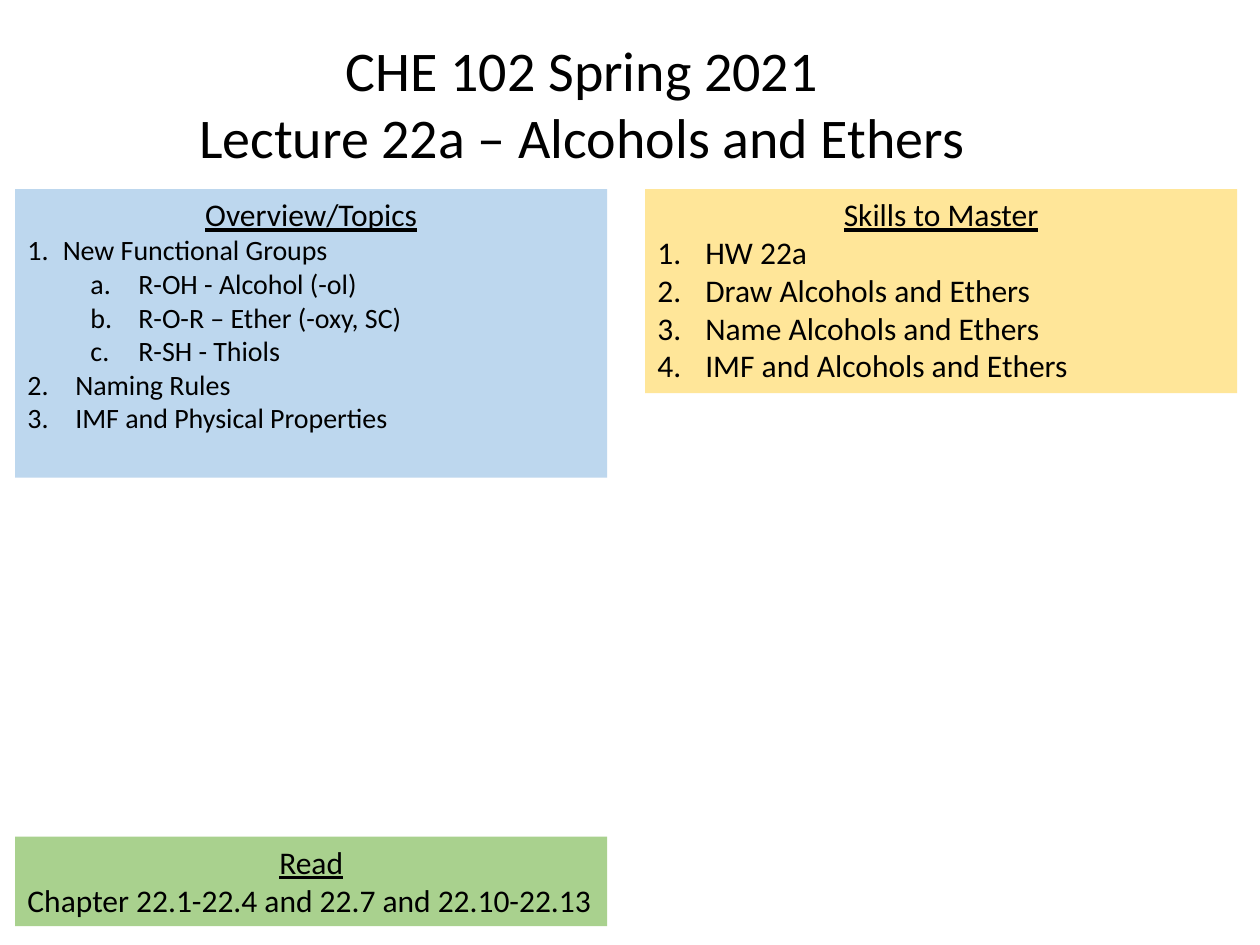
from lxml.etree import SubElement
from pptx import Presentation
from pptx.dml.color import RGBColor
from pptx.enum.shapes import MSO_SHAPE as Shape
from pptx.enum.text import MSO_ANCHOR as Anchor, MSO_AUTO_SIZE as Fit, PP_ALIGN as Align
from pptx.oxml.ns import qn
from pptx.util import Inches, Pt


def color(part, code):
    part.rgb = RGBColor.from_string(code)


def setup(frame, wrap):
    frame.word_wrap = wrap
    frame.auto_size = Fit.NONE
    frame.vertical_anchor = Anchor.TOP
    frame.margin_left = frame.margin_right = Inches(0.1)
    frame.margin_top = frame.margin_bottom = Inches(0.05)


def write(para, text, size, align=Align.LEFT, under=False):
    para.alignment = align
    run = para.add_run()
    run.text = text
    font = run.font
    font.name, font.size, font.underline = "Calibri", Pt(size), under
    color(font.color, "000000")


def number(para, style, left, hang):
    props = para._p.get_or_add_pPr()
    props.set("marL", str(Inches(left)))
    props.set("indent", str(-Inches(hang)))
    SubElement(props, qn("a:buFont"), typeface="+mj-lt")
    SubElement(props, qn("a:buAutoNum"), type=style)


def heading(slide, box, lines):
    title = slide.shapes.title
    title.left, title.top, title.width, title.height = map(Inches, box)
    frame = title.text_frame
    setup(frame, False)
    for i, line in enumerate(lines):
        para = frame.add_paragraph() if i else frame.paragraphs[0]
        write(para, line, 32, Align.CENTER)


def panel(slide, box, fill, head, items, size=18):
    shape = slide.shapes.add_shape(Shape.RECTANGLE, *map(Inches, box))
    shape.shadow.inherit = False
    shape.fill.solid()
    color(shape.fill.fore_color, fill)
    shape.line.fill.background()
    frame = shape.text_frame
    setup(frame, True)
    write(frame.paragraphs[0], head, 18, Align.CENTER, True)
    for text, level, mark in items:
        para = frame.add_paragraph()
        para.level = level
        if mark:
            number(para, *mark)
        write(para, text, size)


def main():
    deck = Presentation()
    deck.slide_width, deck.slide_height = Inches(10), Inches(7.5)
    slide = deck.slides.add_slide(deck.slide_layouts[5])
    left, right, top, width = 0.12, 5.12, 1.5, 4.7
    tight = ("arabicPeriod", 0.28, 0.28)
    main_mark = ("arabicPeriod", 0.38, 0.38)
    sub_mark = ("alphaLcPeriod", 0.88, 0.38)

    heading(slide, (1.45, 0.23, 6.34, 1.18),
            ["CHE 102 Spring 2021", "Lecture 22a – Alcohols and Ethers"])
    panel(slide, (left, top, width, 2.29), "BDD7EE", "Overview/Topics", [
        ("New Functional Groups", 0, tight),
        ("R-OH - Alcohol (-ol)", 1, sub_mark),
        ("R-O-R – Ether (-oxy, SC)", 1, sub_mark),
        ("R-SH - Thiols", 1, sub_mark),
        ("Naming Rules", 0, main_mark),
        ("IMF and Physical Properties", 0, main_mark),
    ], 16)
    skills = ["HW 22a", "Draw Alcohols and Ethers", "Name Alcohols and Ethers",
              "IMF and Alcohols and Ethers"]
    panel(slide, (right, top, width, 1.62), "FFE699", "Skills to Master",
          [(skill, 0, main_mark) for skill in skills])
    panel(slide, (left, 6.64, width, 0.71), "A9D18E", "Read",
          [("Chapter 22.1-22.4 and 22.7 and 22.10-22.13", 0, None)])
    deck.save("out.pptx")


if __name__ == "__main__":
    main()
